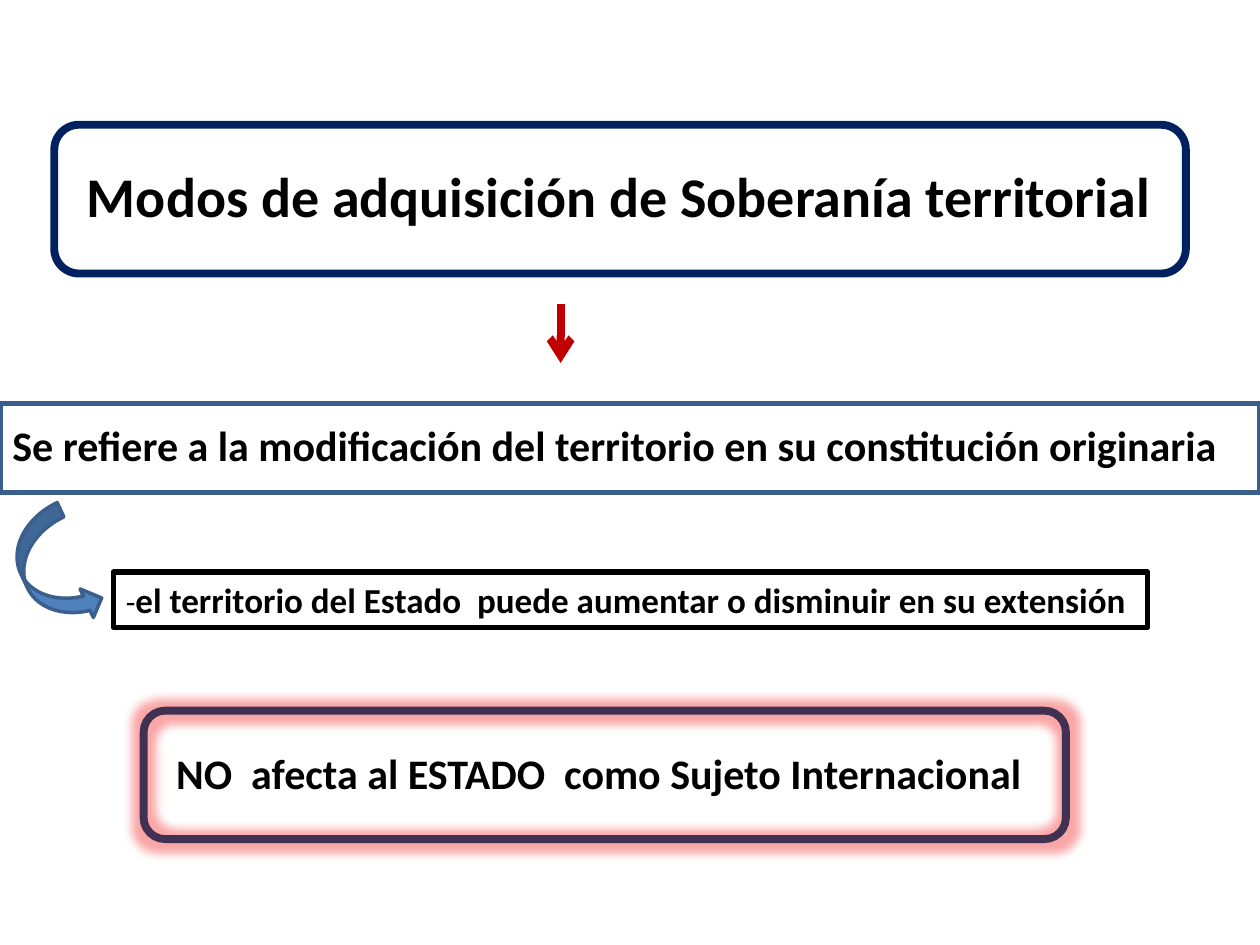
import pptx
import pptx.util
import pptx.dml.color
import pptx.enum.shapes
import pptx.enum.text
import pptx.oxml.ns
from lxml import etree

Pt = pptx.util.Pt
RGBColor = pptx.dml.color.RGBColor
SHAPE = pptx.enum.shapes.MSO_SHAPE

BLACK = RGBColor(0x00, 0x00, 0x00)
NAVY = RGBColor(0x00, 0x20, 0x60)
STEEL = RGBColor(0x3A, 0x5F, 0x8C)
BLUE = RGBColor(0x4F, 0x81, 0xBD)
PURPLE = RGBColor(0x40, 0x31, 0x52)
RED = RGBColor(0xC0, 0x00, 0x00)
GLOW = RGBColor(0xF0, 0x00, 0x00)
FONT = "Calibri"


def add_child(parent, tag, **attributes):
    return etree.SubElement(parent, pptx.oxml.ns.qn(tag), attributes)


def write_text(box, text, size):
    """Fill a box with one bold, left-aligned paragraph and return it."""
    frame = box.text_frame
    frame.word_wrap = True
    frame.auto_size = pptx.enum.text.MSO_AUTO_SIZE.NONE
    frame.vertical_anchor = pptx.enum.text.MSO_ANCHOR.TOP
    para = frame.paragraphs[0]
    para.text = text
    para.alignment = pptx.enum.text.PP_ALIGN.LEFT
    para.font.name = FONT
    para.font.size = Pt(size)
    para.font.bold = True
    para.font.color.rgb = BLACK
    return para


def place_title(slide, text, left, top, width, height):
    title = slide.shapes.title
    title.left, title.top = Pt(left), Pt(top)
    title.width, title.height = Pt(width), Pt(height)
    write_text(title, text, 32)


def add_text(slide, text, size, left, top, width, height):
    box = slide.shapes.add_textbox(Pt(left), Pt(top), Pt(width), Pt(height))
    write_text(box, text, size)
    return box


def add_shape(slide, kind, line_color, line_width, left, top, width, height):
    shape = slide.shapes.add_shape(kind, Pt(left), Pt(top), Pt(width), Pt(height))
    shape.shadow.inherit = False
    shape.fill.background()
    shape.line.color.rgb = line_color
    shape.line.width = Pt(line_width)
    return shape


def add_glow(shape, color, radius, opacity):
    """Add a glow; opacity is a percentage."""
    effects = shape._element.spPr.find(pptx.oxml.ns.qn("a:effectLst"))
    glow = add_child(effects, "a:glow", rad=str(Pt(radius)))
    tint = add_child(glow, "a:srgbClr", val=str(color))
    add_child(tint, "a:alpha", val=str(opacity * 1000))


def add_down_arrow(slide, x, top, bottom):
    arrow = slide.shapes.add_connector(
        pptx.enum.shapes.MSO_CONNECTOR.STRAIGHT, Pt(x), Pt(top), Pt(x), Pt(bottom))
    arrow.line.color.rgb = RED
    arrow.line.width = Pt(4.5)
    add_child(arrow.line._get_or_add_ln(), "a:tailEnd", type="arrow")
    add_child(arrow._element.spPr, "a:effectLst")


def add_curved_arrow(slide, left, top, width, height):
    arrow = add_shape(slide, SHAPE.CURVED_RIGHT_ARROW, STEEL, 2, left, top, width, height)
    arrow.fill.solid()
    arrow.fill.fore_color.rgb = BLUE
    arrow.rotation = 335


def add_detail(slide):
    box = add_text(slide, "-", 20, 64.8, 326.9, 591.1, 31.7)
    box.line.color.rgb = BLACK
    box.line.width = Pt(3)
    para = box.text_frame.paragraphs[0]
    dash = para.runs[0]
    dash.font.size = Pt(18)
    dash.font.bold = False
    span = para.add_run()
    span.text = "el territorio del Estado  puede aumentar o disminuir en su extensión"


def main():
    deck = pptx.Presentation()
    deck.slide_width, deck.slide_height = Pt(720), Pt(540)
    slide = deck.slides.add_slide(deck.slide_layouts.get_by_name("Title Only"))

    place_title(slide, "Modos de adquisición de Soberanía territorial",
                42.5, 88.6, 627.8, 46.1)
    add_shape(slide, SHAPE.ROUNDED_RECTANGLE, NAVY, 4.5, 31, 71.3, 646.6, 85)
    add_down_arrow(slide, 320.4, 173.5, 207.4)

    add_text(slide, "Se refiere a la modificación del territorio en su constitución originaria",
             24, 0, 236.2, 709.9, 36.7)
    add_shape(slide, SHAPE.RECTANGLE, STEEL, 3, 0, 230.4, 720, 51.1)

    add_curved_arrow(slide, 13, 291.6, 36, 69.1)
    add_detail(slide)

    frame = add_shape(slide, SHAPE.ROUNDED_RECTANGLE, PURPLE, 4.5, 82.1, 406.1, 527, 73.4)
    add_glow(frame, GLOW, 11, 35)
    add_text(slide, "NO  afecta al ESTADO  como Sujeto Internacional",
             24, 93.6, 423.4, 501.8, 36.7)

    deck.save("out.pptx")


if __name__ == "__main__":
    main()
